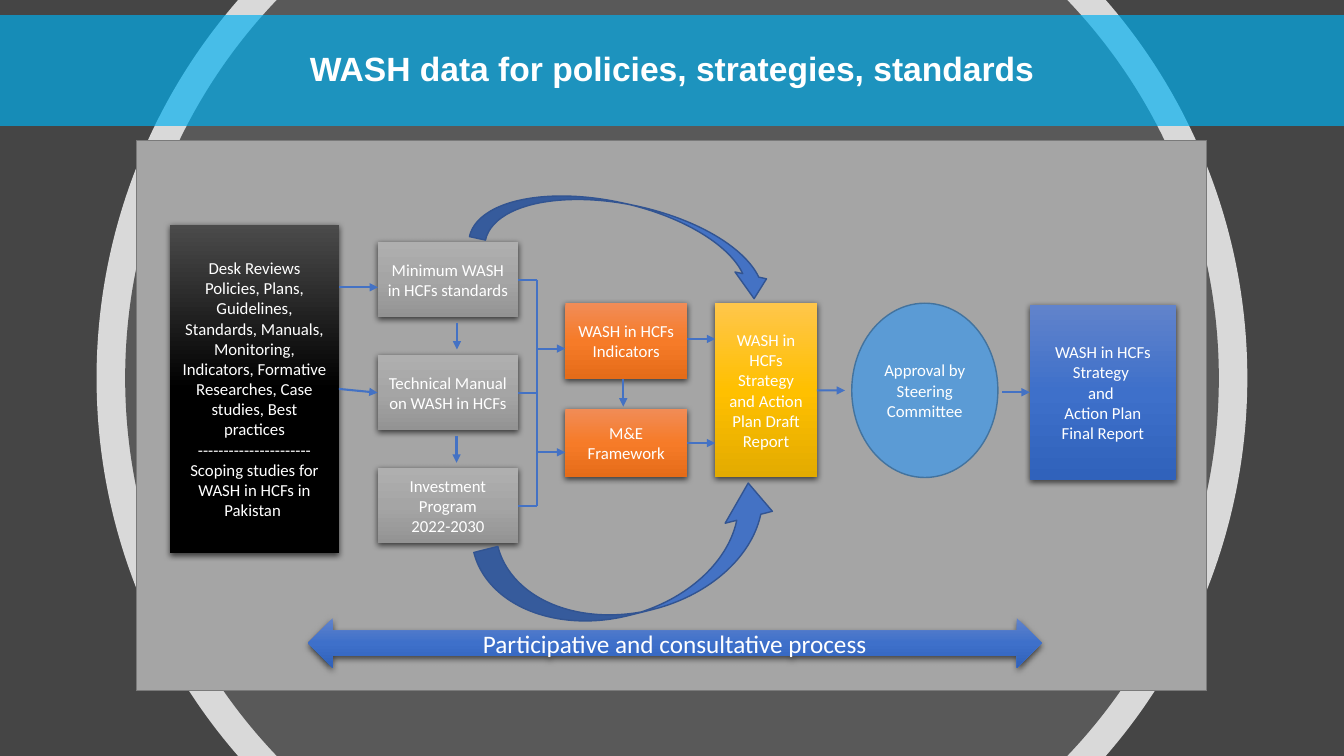
"""Build the slide on WASH data for policies, strategies and standards."""
from copy import deepcopy
from dataclasses import dataclass
from math import asin, cos, pi, sin, tan
from typing import NamedTuple

from lxml import etree
from pptx import Presentation
from pptx.dml.color import RGBColor
from pptx.dml.fill import FillFormat
from pptx.enum.shapes import MSO_CONNECTOR, MSO_SHAPE
from pptx.enum.text import MSO_ANCHOR, MSO_AUTO_SIZE, PP_ALIGN
from pptx.oxml.ns import qn
from pptx.shapes.autoshape import Shape
from pptx.slide import Slide
from pptx.text.text import TextFrame
from pptx.util import Emu, Pt

RECTANGLE, ELLIPSE = MSO_SHAPE.RECTANGLE, MSO_SHAPE.OVAL
DOUBLE_ARROW, CURVED_ARROW = MSO_SHAPE.LEFT_RIGHT_ARROW, MSO_SHAPE.CURVED_RIGHT_ARROW
STRAIGHT, NO_AUTOFIT = MSO_CONNECTOR.STRAIGHT, MSO_AUTO_SIZE.NONE
MIDDLE, CENTER = MSO_ANCHOR.MIDDLE, PP_ALIGN.CENTER
LEFT_SIDE, RIGHT_SIDE = 1, 3
COLUMNS, ROWS, CELL = 160, 90, 76200
BUS, GREY_TOP, GREY_STEP = 63.9, 28.8, 13.45


@dataclass(frozen=True)
class Theme:
    """Colours, fonts and type sizes of the slide."""
    background: str = "454545"
    ring: str = "FFFFFF"
    disc: str = "595959"
    banner: str = "00B0F0"
    panel: tuple[str, str] = ("A5A5A5", "7A7A7A")
    circle: tuple[str, str] = ("5B9BD5", "43739E")
    curve: tuple[str, str] = ("4472C4", "325491")
    link: str = "4472C4"
    text: str = "FFFFFF"
    black: tuple[str, ...] = ("4B4B4B", "000000", "000000")
    grey: tuple[str, ...] = ("AFAFAF", "A5A5A5", "939393")
    orange: tuple[str, ...] = ("F18C57", "F67B28", "E56C19")
    gold: tuple[str, ...] = ("FFC64B", "FFC000", "E3AB00")
    blue: tuple[str, ...] = ("6183CB", "3E70CA", "3062BB")
    title_font: str = "Arial"
    body_font: str = "Calibri"
    title_size: int = 24
    process_size: int = 18
    box_size: int = 12


THEME = Theme()


class Area(NamedTuple):
    """Left, top, width and height in grid cells."""
    left: float
    top: float
    width: float
    height: float


class Point(NamedTuple):
    """Column and row on the grid."""
    column: float
    row: float


class Joint(NamedTuple):
    """Middle of one side of a named box."""
    box: str
    side: int


class Box(NamedTuple):
    """A labelled shape; three colours make a gradient, two a fill and a line."""
    name: str
    area: Area
    colors: tuple[str, ...]
    lines: tuple[str, ...] = ()
    preset: MSO_SHAPE = RECTANGLE
    size: int = THEME.box_size


class Link(NamedTuple):
    """A straight line between two places."""
    start: Point | Joint
    end: Point | Joint
    arrow: bool = True


class Curve(NamedTuple):
    """A rotated curved arrow."""
    area: Area
    rotation: float
    flipped: bool


GREY_LABELS = {
    "minimum": ("Minimum WASH in HCFs standards",),
    "manual": ("Technical Manual on WASH in HCFs",),
    "investment": ("Investment Program", "2022-2030"),
}
BOXES = [
    Box("panel", Area(16.25, 16.75, 127.4, 65.5), THEME.panel),
    Box("process", Area(36.65, 73.6, 87.36, 5.88), THEME.blue,
        ("Participative and consultative process",), DOUBLE_ARROW, THEME.process_size),
    Box("indicators", Area(67.3, 36.1, 14.5, 9), THEME.orange, ("WASH in HCFs", "Indicators")),
    Box("framework", Area(67.3, 48.65, 14.5, 8.2), THEME.orange, ("M&E Framework",)),
    Box("draft", Area(85.15, 36.1, 12.1, 20.75), THEME.gold,
        ("WASH in HCFs Strategy and Action Plan Draft Report",)),
    *(Box(name, Area(44.95, GREY_TOP + index * GREY_STEP, 16.75, 9), THEME.grey, lines)
      for index, (name, lines) in enumerate(GREY_LABELS.items())),
    Box("reviews", Area(20.25, 26.75, 20.1, 39.1), THEME.black,
        ("Desk Reviews",
         "Policies, Plans, Guidelines, Standards, Manuals, Monitoring, Indicators, "
         "Formative Researches, Case studies, Best practices",
         "----------------------", "Scoping studies for WASH in HCFs in Pakistan ")),
    Box("approval", Area(101.4, 36.1, 17.4, 20.75), THEME.circle,
        ("Approval by Steering Committee",), ELLIPSE),
    Box("final", Area(122.6, 36.3, 17.4, 20.8), THEME.blue,
        ("WASH in HCFs Strategy ", "and ", "Action Plan", "Final Report")),
]
LINKS = [
    Link(Point(81.8, 40.35), Point(85.15, 40.35)),
    Link(Joint("framework", RIGHT_SIDE), Point(85.15, 52.75)),
    Link(Point(BUS, 41.5), Point(67.3, 41.5)),
    Link(Point(BUS, 53.85), Point(67.3, 53.85)),
    Link(Point(BUS, 33.3), Point(BUS, 60.2), arrow=False),
    *(Link(Joint(name, RIGHT_SIDE), Point(BUS, GREY_TOP + index * GREY_STEP + 4.5), arrow=False)
      for index, name in enumerate(GREY_LABELS)),
    Link(Point(54.4, 38.4), Point(54.4, 41.6)),
    Link(Point(54.35, 51.9), Point(54.35, 55.1)),
    Link(Point(40.4, 34.2), Point(45, 34.2)),
    Link(Joint("reviews", RIGHT_SIDE), Joint("manual", LEFT_SIDE)),
    Link(Joint("draft", RIGHT_SIDE), Point(100.6, 46.48)),
    Link(Point(119.3, 46.7), Joint("final", LEFT_SIDE)),
    Link(Point(74.2, 45.1), Point(74.2, 48.4)),
]
CURVES = [
    Curve(Area(70.7, 9.95, 7.8, 36.6), 282.3, True),
    Curve(Area(69.7, 48.7, 11.8, 36.6), 255.8, False),
]


def cells(*lengths: float) -> list[Emu]:
    """Turn grid cells into slide units."""
    return [Emu(round(length * CELL)) for length in lengths]


def paint(fill: FillFormat, color: str, opacity: int = 100) -> None:
    """Fill with one colour, see-through below 100 percent."""
    fill.solid()
    fill.fore_color.rgb = RGBColor.from_string(color)
    if opacity < 100:
        node = fill._xPr.find(f".//{qn('a:srgbClr')}")
        etree.SubElement(node, qn("a:alpha"), val=str(opacity * 1000))


def write(frame: TextFrame, lines: tuple[str, ...], font: str, size: int) -> None:
    """Set centred lines of text in one style."""
    frame.word_wrap, frame.auto_size, frame.vertical_anchor = True, NO_AUTOFIT, MIDDLE
    frame.text = "\n".join(lines)
    for paragraph in frame.paragraphs:
        paragraph.alignment = CENTER
        paragraph.font.name, paragraph.font.size = font, Pt(size)
        paragraph.font.color.rgb = RGBColor.from_string(THEME.text)


def shade(shape: Shape, colors: tuple[str, ...]) -> None:
    """Give a shape a downward gradient and a soft shadow."""
    shape.line.fill.background()
    shape.fill.gradient()
    shape.fill.gradient_angle = 270
    properties = shape.element.spPr
    stop_list = properties.find(f".//{qn('a:gsLst')}")
    stop_list.append(deepcopy(stop_list[0]))
    for index, (stop, color) in enumerate(zip(shape.fill.gradient_stops, colors)):
        stop.position = index / 2
        stop.color.rgb = RGBColor.from_string(color)
    shadow = etree.SubElement(properties.find(qn("a:effectLst")), qn("a:outerShdw"),
                              blurRad=str(Pt(4.5)), dist=str(Pt(1.5)), dir="5400000",
                              algn="ctr", rotWithShape="0")
    color_node = etree.SubElement(shadow, qn("a:srgbClr"), val="000000")
    etree.SubElement(color_node, qn("a:alpha"), val="63000")


def draw_shape(slide: Slide, preset: MSO_SHAPE, area: Area, colors: tuple[str, ...]) -> Shape:
    """Add a preset shape in its colours."""
    shape = slide.shapes.add_shape(preset, *cells(*area))
    shape.shadow.inherit = False
    if len(colors) == 3:
        shade(shape, colors)
    else:
        paint(shape.fill, colors[0])
        paint(shape.line.fill, colors[1])
        shape.line.width = Pt(1)
    return shape


def draw_box(slide: Slide, box: Box) -> Shape:
    """Add a box with its label."""
    shape = draw_shape(slide, box.preset, box.area, box.colors)
    if box.lines:
        write(shape.text_frame, box.lines, THEME.body_font, box.size)
    return shape


def draw_link(slide: Slide, link: Link, shapes: dict[str, Shape]) -> None:
    """Add a connector, joined to boxes where it meets a side's middle."""
    ends = [end if isinstance(end, Point) else Point(0, 0) for end in (link.start, link.end)]
    connector = slide.shapes.add_connector(STRAIGHT, *cells(*ends[0], *ends[1]))
    for end, join in ((link.start, connector.begin_connect), (link.end, connector.end_connect)):
        if isinstance(end, Joint):
            join(shapes[end.box], end.side)
    paint(connector.line.fill, THEME.link)
    connector.line.width = Pt(1.5)
    properties = connector.element.spPr
    if link.arrow:
        etree.SubElement(properties.find(qn("a:ln")), qn("a:tailEnd"), type="triangle")
    etree.SubElement(properties, qn("a:effectLst"))


def draw_curve(slide: Slide, curve: Curve) -> None:
    """Add a curved arrow."""
    shape = draw_shape(slide, CURVED_ARROW, curve.area, THEME.curve)
    for index, value in enumerate((0.25, 0.492, 0.336)):
        shape.adjustments[index] = value
    shape.rotation = curve.rotation
    if curve.flipped:
        shape.element.spPr.find(qn("a:xfrm")).set("flipH", "1")


def draw_disc(slide: Slide, radius: float, color: str, opacity: int) -> Shape:
    """Add a centred disc of four arcs, cut off at the slide's top and bottom."""
    reach = asin(ROWS / 2 / radius)
    angles = [-reach, 0, reach, pi - reach, pi, pi + reach]

    def spot(angle: float, pull: float = 0) -> list[Emu]:
        """Find a place on the circle, moved along its tangent."""
        return cells(COLUMNS / 2 + radius * (cos(angle) - pull * sin(angle)),
                     ROWS / 2 + radius * (sin(angle) + pull * cos(angle)))

    builder = slide.shapes.build_freeform(*spot(angles[0]), scale=1.0)
    builder.add_line_segments([spot(angle) for angle in angles[1:]], close=True)
    disc = builder.convert_to_shape()
    pull = 4 / 3 * tan(reach / 4)
    segments = list(disc.element.iter(qn("a:lnTo")))
    arcs = [(segments[index], angles[index], angles[index + 1]) for index in (0, 1, 3, 4)]
    for segment, start, end in arcs:
        segment.tag = qn("a:cubicBezTo")
        for index, (x, y) in enumerate((spot(start, pull), spot(end, -pull))):
            control = etree.Element(qn("a:pt"), x=str(x - disc.left), y=str(y - disc.top))
            segment.insert(index, control)
    disc.shadow.inherit = False
    disc.line.fill.background()
    paint(disc.fill, color, opacity)
    return disc


def draw_title(slide: Slide) -> None:
    """Turn the title placeholder into the banner."""
    title = slide.shapes.title
    title.left, title.top, title.width, title.height = cells(0, 1.8, COLUMNS, 13.2)
    paint(title.fill, THEME.banner, 67)
    write(title.text_frame, ("WASH data for policies, strategies, standards",),
          THEME.title_font, THEME.title_size)
    paragraph = title.text_frame.paragraphs[0]
    paragraph.line_spacing, paragraph.font.bold = 0.9, True


def main() -> None:
    """Build and save the presentation."""
    presentation = Presentation()
    presentation.slide_width, presentation.slide_height = cells(COLUMNS, ROWS)
    slide = presentation.slides.add_slide(presentation.slide_layouts[5])
    paint(slide.background.fill, THEME.background)
    draw_title(slide)
    for radius, color, opacity in ((68.5, THEME.ring, 80), (65.1, THEME.disc, 100)):
        disc = draw_disc(slide, radius, color, opacity)
        slide.shapes.title.element.addprevious(disc.element)
    shapes = {box.name: draw_box(slide, box) for box in BOXES}
    for link in LINKS:
        draw_link(slide, link, shapes)
    for curve in CURVES:
        draw_curve(slide, curve)
    presentation.save("out.pptx")


if __name__ == "__main__":
    main()
